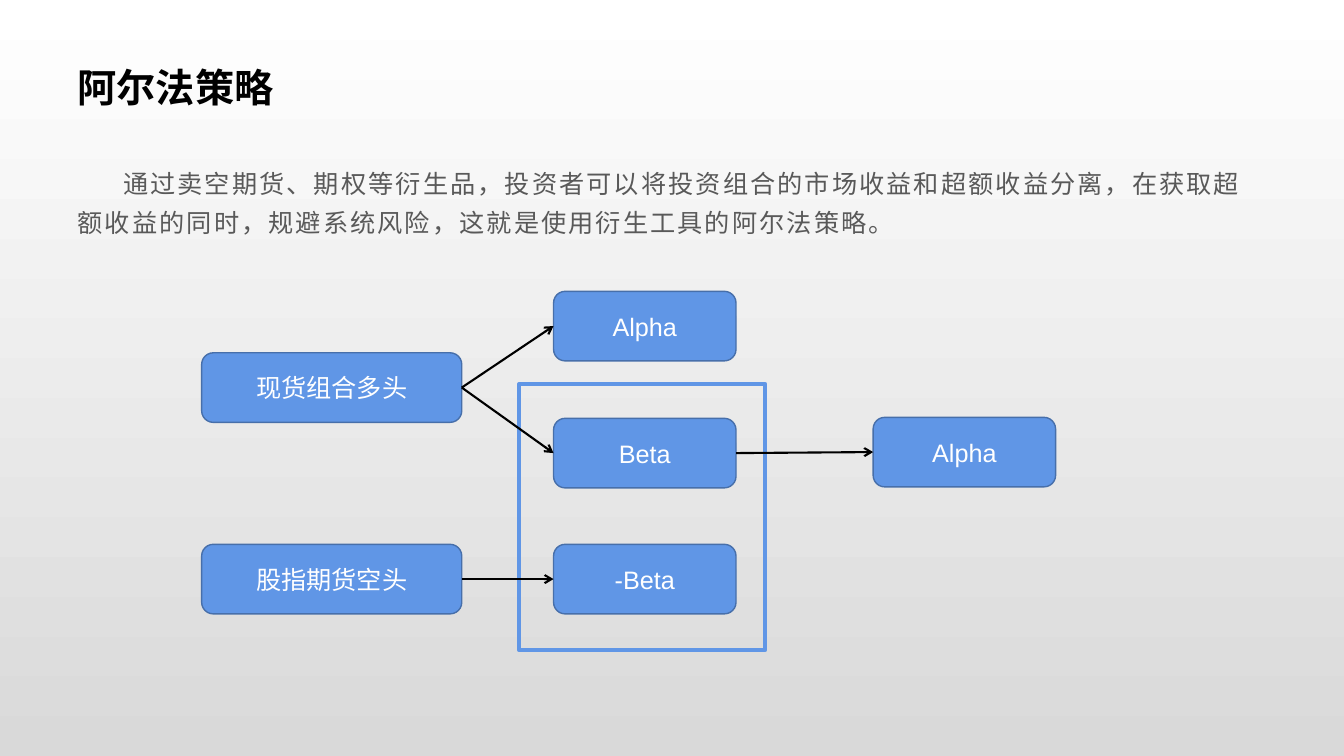
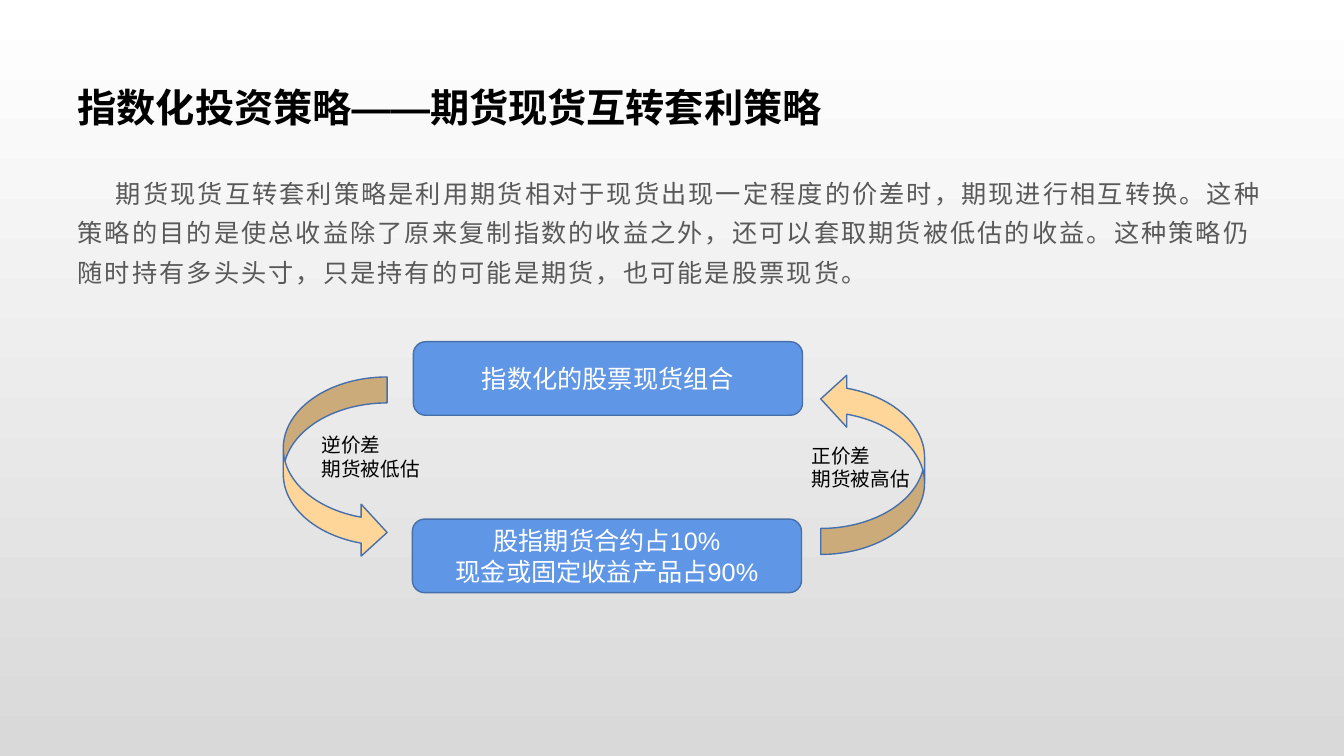
from dataclasses import dataclass
from typing import Any

from lxml import etree
from pptx import Presentation
from pptx.dml.color import RGBColor
from pptx.enum import shapes, text
from pptx.oxml.ns import qn
from pptx.util import Inches, Pt

WHITE = RGBColor(0xFF, 0xFF, 0xFF)
SILVER = RGBColor(0xD9, 0xD9, 0xD9)
BLACK = RGBColor(0x00, 0x00, 0x00)
GREY = RGBColor(0x59, 0x59, 0x59)
BLUE = RGBColor(0x60, 0x96, 0xE6)
NAVY = RGBColor(0x47, 0x6F, 0xAA)
SAND = RGBColor(0xFF, 0xD6, 0x99)

FONT = "Arial"
LEFT_SITE, RIGHT_SITE = 1, 3
KIND = shapes.MSO_SHAPE

TITLE = {"size": Pt(28), "bold": True, "color": BLACK}
BODY = {"size": Pt(18), "color": GREY}
BOX = {"size": Pt(18), "color": WHITE}
NOTE = {"size": Pt(14), "color": BLACK}

LEFT = {"alignment": text.PP_ALIGN.LEFT}
CENTER = {"alignment": text.PP_ALIGN.CENTER}
PROSE = {**LEFT, "line_spacing": 1.3, "space_before": Pt(0), "space_after": Pt(10)}

MIDDLE = {"vertical_anchor": text.MSO_ANCHOR.MIDDLE, "word_wrap": True}
FIXED = {"auto_size": text.MSO_AUTO_SIZE.NONE, "word_wrap": True}
GROW = {"auto_size": text.MSO_AUTO_SIZE.SHAPE_TO_FIT_TEXT, "word_wrap": True}


@dataclass(frozen=True)
class Area:
    x: float
    y: float
    w: float
    h: float

    def emu(self) -> tuple:
        return tuple(Inches(v) for v in (self.x, self.y, self.w, self.h))


@dataclass(frozen=True)
class Node:
    key: str
    lines: tuple
    area: Area


@dataclass(frozen=True)
class Turn:
    area: Area
    rotation: int
    lines: tuple
    note: Area


def set_attrs(obj: Any, values: dict) -> None:
    for name, value in values.items():
        setattr(obj, name, value)


def write(sp: Any, lines: tuple, font: dict, para: dict, frame: dict) -> None:
    tf = sp.text_frame
    set_attrs(tf, frame)
    for i, line in enumerate(lines):
        p = tf.add_paragraph() if i else tf.paragraphs[0]
        set_attrs(p, para)
        r = p.add_run()
        r.text = line
        set_attrs(r.font, {k: v for k, v in font.items() if k != "color"})
        r.font.name = FONT
        r.font.color.rgb = font["color"]
        etree.SubElement(r.font._element, qn("a:ea"), typeface=FONT)


def place(sp: Any, area: Area) -> None:
    set_attrs(sp, dict(zip(("left", "top", "width", "height"), area.emu())))


def add_page(prs: Any, title: str, title_y: float, body: str, body_y: float,
             indent: float) -> Any:
    s = prs.slides.add_slide(prs.slide_layouts[1])
    head, prose = s.shapes.title, s.placeholders[1]
    place(head, Area(0.67, title_y, 12, 0.77))
    write(head, (title,), TITLE, LEFT, {**FIXED, **MIDDLE})
    place(prose, Area(0.67, body_y, 12, 5.2))
    write(prose, (body,), BODY, PROSE, FIXED)
    p = prose.text_frame.paragraphs[0]
    p.runs[0].font._element.set("spc", "150")
    pPr = p._p.get_or_add_pPr()
    pPr.set("marL", "0")
    pPr.set("indent", str(Inches(indent)))
    etree.SubElement(pPr, qn("a:buNone"))
    return s


def add_outline(s: Any, kind: Any, area: Area, fill: RGBColor | None,
                line: RGBColor, width: float) -> Any:
    sp = s.shapes.add_shape(kind, *area.emu())
    sp.shadow.inherit = False
    if fill is None:
        sp.fill.background()
    else:
        sp.fill.solid()
        sp.fill.fore_color.rgb = fill
    sp.line.color.rgb = line
    sp.line.width = Pt(width)
    return sp


def add_node(s: Any, node: Node) -> Any:
    sp = add_outline(s, KIND.ROUNDED_RECTANGLE, node.area, BLUE, NAVY, 1)
    write(sp, node.lines, BOX, CENTER, MIDDLE)
    return sp


def add_arrow(s: Any, start: Any, end: Any) -> None:
    c = s.shapes.add_connector(shapes.MSO_CONNECTOR.STRAIGHT, 0, 0, 0, 0)
    c.begin_connect(start, RIGHT_SITE)
    c.end_connect(end, LEFT_SITE)
    c.line.color.rgb = BLACK
    c.line.width = Pt(1.5)
    spPr = c._element.spPr
    etree.SubElement(spPr.find(qn("a:ln")), qn("a:tailEnd"), type="arrow")
    etree.SubElement(spPr, qn("a:effectLst"))


def add_turn(s: Any, turn: Turn) -> None:
    sp = add_outline(s, KIND.CURVED_RIGHT_ARROW, turn.area, SAND, NAVY, 1)
    sp.rotation = turn.rotation
    note = s.shapes.add_textbox(*turn.note.emu())
    write(note, turn.lines, NOTE, LEFT, GROW)


def style_background(prs: Any) -> None:
    fill = prs.slide_master.background.fill
    fill.gradient()
    fill.gradient_angle = 270
    for stop, color, position in zip(fill.gradient_stops, (WHITE, SILVER), (0, 1)):
        stop.color.rgb = color
        stop.position = position


def alpha_slide(prs: Any) -> None:
    s = add_page(
        prs, "阿尔法策略", 0.48,
        "通过卖空期货、期权等衍生品，投资者可以将投资组合的市场收益和超额收益分离，"
        "在获取超额收益的同时，规避系统风险，这就是使用衍生工具的阿尔法策略。",
        1.53, 0.45)
    wide, narrow, height = 2.58, 1.81, 0.69
    nodes = (
        Node("spot", ("现货组合多头",), Area(2, 3.5, wide, height)),
        Node("futures", ("股指期货空头",), Area(2, 5.4, wide, height)),
        Node("alpha", ("Alpha",), Area(5.49, 2.89, narrow, height)),
        Node("beta", ("Beta",), Area(5.49, 4.15, narrow, height)),
        Node("minus_beta", ("-Beta",), Area(5.49, 5.4, narrow, height)),
        Node("result", ("Alpha",), Area(8.66, 4.14, narrow, height)),
    )
    boxes = {n.key: add_node(s, n) for n in nodes}
    add_outline(s, KIND.RECTANGLE, Area(5.15, 3.81, 2.44, 2.64), None, BLUE, 3)
    for start, end in (("spot", "alpha"), ("spot", "beta"),
                       ("futures", "minus_beta"), ("beta", "result")):
        add_arrow(s, boxes[start], boxes[end])


def index_slide(prs: Any) -> None:
    s = add_page(
        prs, "指数化投资策略——期货现货互转套利策略", 0.67,
        "期货现货互转套利策略是利用期货相对于现货出现一定程度的价差时，期现进行相互转换。"
        "这种策略的目的是使总收益除了原来复制指数的收益之外，还可以套取期货被低估的收益。"
        "这种策略仍随时持有多头头寸，只是持有的可能是期货，也可能是股票现货。",
        1.63, 0.38)
    for node in (
        Node("stocks", ("指数化的股票现货组合",), Area(4.1, 3.39, 3.86, 0.73)),
        Node("contracts", ("股指期货合约占10%", "现金或固定收益产品占90%"),
             Area(4.09, 5.15, 3.86, 0.73)),
    ):
        add_node(s, node)
    for turn in (
        Turn(Area(2.81, 3.74, 1.03, 1.8), 0, ("逆价差", "期货被低估"),
             Area(3.09, 4.25, 1.92, 0.57)),
        Turn(Area(8.14, 3.7, 1.03, 1.8), 180, ("正价差", "期货被高估"),
             Area(7.95, 4.35, 1.92, 0.57)),
    ):
        add_turn(s, turn)


def main() -> None:
    prs = Presentation()
    prs.slide_width, prs.slide_height = Inches(13.33), Inches(7.5)
    style_background(prs)
    alpha_slide(prs)
    index_slide(prs)
    prs.save("out.pptx")


if __name__ == "__main__":
    main()
